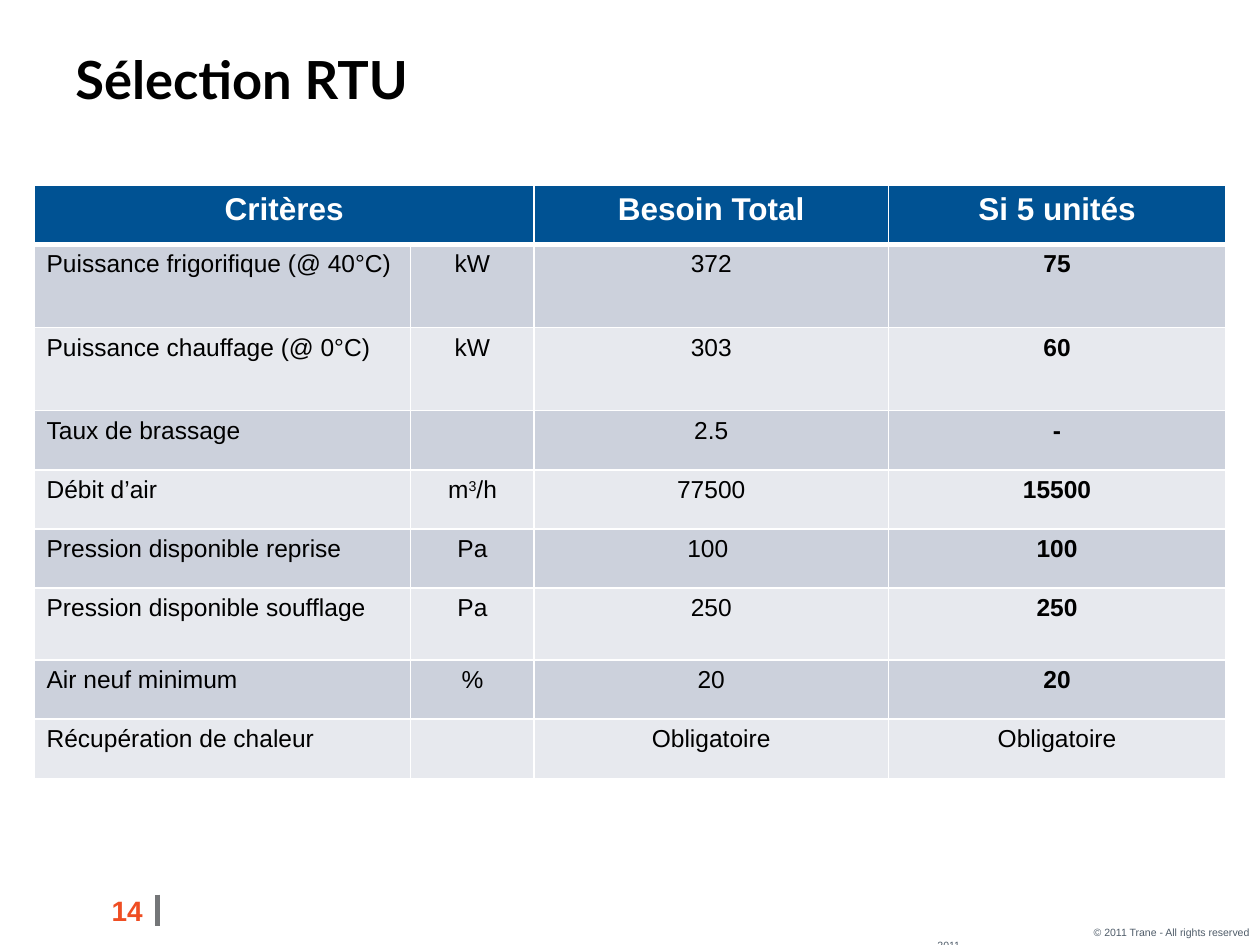
from lxml.etree import SubElement
from pptx import Presentation
from pptx.dml.color import RGBColor
from pptx.enum.shapes import MSO_CONNECTOR
from pptx.enum.text import MSO_ANCHOR, PP_ALIGN
from pptx.oxml.ns import qn
from pptx.util import Inches, Pt

BLACK = RGBColor(0x00, 0x00, 0x00)
WHITE = RGBColor(0xFF, 0xFF, 0xFF)
BLUE = RGBColor(0x00, 0x52, 0x93)
BAND_DARK = RGBColor(0xCC, 0xD1, 0xDC)
BAND_LIGHT = RGBColor(0xE7, 0xE9, 0xEE)
ORANGE = RGBColor(0xEF, 0x4E, 0x23)
GREY = RGBColor(0x74, 0x76, 0x78)
SLATE = RGBColor(0x4F, 0x5C, 0x69)

COLUMNS = [2.99, 0.98, 2.81, 2.68]
ROWS = [0.47, 0.66, 0.66, 0.47, 0.47, 0.47, 0.57, 0.47, 0.47]
CRITERIA = [
    ("Critères", "", "Besoin Total", "Si 5 unités"),
    ("Puissance frigorifique (@ 40°C)", "kW", "372", "75"),
    ("Puissance chauffage (@ 0°C)", "kW", "303", "60"),
    ("Taux de brassage", "", "2.5", "-"),
    ("Débit d’air", "m^3^/h", "77500", "15500"),
    ("Pression disponible reprise", "Pa", "100 ", "100"),
    ("Pression disponible soufflage", "Pa", "250", "250"),
    ("Air neuf minimum", "%", "20", "20"),
    ("Récupération de chaleur", "", "Obligatoire", "Obligatoire"),
]


def write(frame, text, size=14, font="Arial", color=BLACK, bold=False,
          align=PP_ALIGN.LEFT, spacing=None):
    """Write one paragraph; parts between carets are superscript."""
    para = frame.paragraphs[0]
    para.alignment = align
    if spacing:
        para.line_spacing = spacing
    para.font.size = Pt(size)
    for index, part in enumerate(text.split("^")):
        if not part:
            continue
        span = para.add_run()
        span.text = part
        span.font.name = font
        span.font.size = Pt(size)
        span.font.bold = bold
        span.font.color.rgb = color
        if index % 2:
            span.font._element.set("baseline", "30000")


def add_text(page, box, text, insets=(0.1, 0.05, 0.1, 0.05), wrap=True, **style):
    frame = page.shapes.add_textbox(*map(Inches, box)).text_frame
    frame.word_wrap = wrap
    frame.vertical_anchor = MSO_ANCHOR.TOP
    (frame.margin_left, frame.margin_top,
     frame.margin_right, frame.margin_bottom) = map(Inches, insets)
    write(frame, text, **style)


def set_borders(cell, bottom=1, top=1):
    properties = cell._tc.get_or_add_tcPr()
    sides = {"a:lnL": 1, "a:lnR": 1, "a:lnT": top, "a:lnB": bottom}
    for tag, width in sides.items():
        line = SubElement(properties, qn(tag), w=str(Pt(width)))
        fill = SubElement(line, qn("a:solidFill"))
        SubElement(fill, qn("a:srgbClr"), val=str(WHITE))


def add_criteria_table(page, box):
    table = page.shapes.add_table(
        len(ROWS), len(COLUMNS), *map(Inches, box)).table
    for column, width in zip(table.columns, COLUMNS):
        column.width = Inches(width)
    for row, height in zip(table.rows, ROWS):
        row.height = Inches(height)
    table.cell(0, 0).merge(table.cell(0, 1))

    last_column = len(COLUMNS) - 1
    for r, values in enumerate(CRITERIA):
        header = r == 0
        band = BLUE if header else BAND_DARK if r % 2 else BAND_LIGHT
        for c, value in enumerate(values):
            cell = table.cell(r, c)
            set_borders(cell, bottom=3 if header else 1, top=3 if r == 1 else 1)
            cell.fill.solid()
            cell.fill.fore_color.rgb = band
            numeric_result = c == last_column and value != "Obligatoire"
            write(cell.text_frame, value,
                  size=18 if header else 14,
                  color=WHITE if header else BLACK,
                  bold=header or numeric_result,
                  align=PP_ALIGN.CENTER if header or c else PP_ALIGN.LEFT)


def add_footer(page, box):
    left, top, width, height = box
    # Page number and its bar
    add_text(page, (left + 0.46, top, 0.77, 0.37), "14", size=16, color=ORANGE,
             bold=True, align=PP_ALIGN.RIGHT)
    bar_x = Inches(left + 1.25)
    bar = page.shapes.add_connector(
        MSO_CONNECTOR.STRAIGHT, bar_x, Inches(top + 0.06),
        bar_x, Inches(top + 0.31))
    bar.line.color.rgb = GREY
    bar.line.width = Pt(3)
    SubElement(bar._element.spPr, qn("a:effectLst"))
    # Copyright line and year, the year one line lower
    line_top = top + 0.31
    add_text(page, (left + width - 1.32, line_top, 1.28, 0.1),
             "© 2011 Trane - All rights reserved",
             insets=(0, 0, 0, 0), wrap=False, size=6, color=SLATE)
    add_text(page, (left + width - 2.56, line_top, 1.19, 0.1), "2011",
             insets=(0, 0.1, 0, 0), size=6, color=SLATE)


def main():
    deck = Presentation()
    deck.slide_width, deck.slide_height = Inches(10), Inches(7.5)
    page = deck.slides.add_slide(deck.slide_layouts[6])
    # Footer, title and table
    add_footer(page, (0, 7.04, 10, 0.46))
    add_text(page, (0.5, 0.4, 7.1, 0.62), "Sélection RTU", size=30,
             font="Lato", bold=True, spacing=0.85)
    add_criteria_table(page, (0.27, 1.47, sum(COLUMNS), sum(ROWS)))
    deck.save("out.pptx")


if __name__ == "__main__":
    main()
